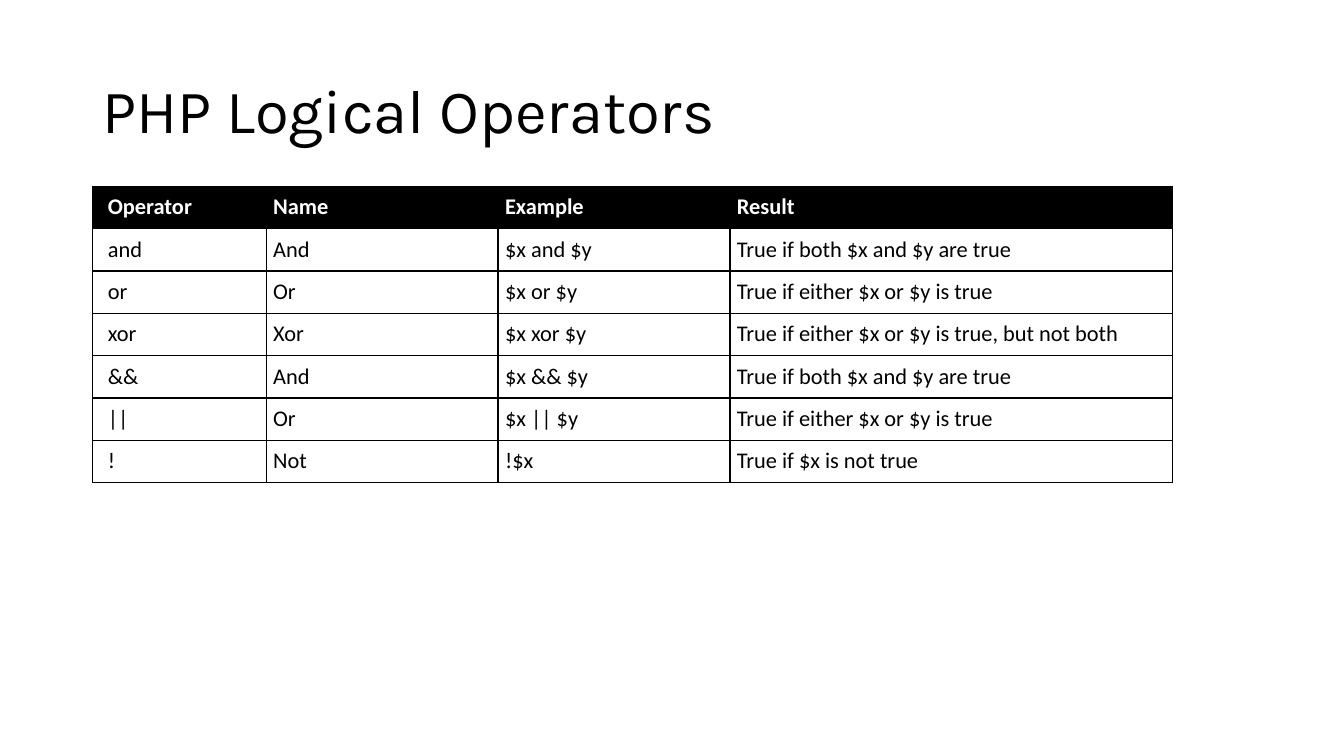
from lxml import etree
from pptx import Presentation
from pptx.dml.color import RGBColor
from pptx.enum.text import MSO_ANCHOR
from pptx.oxml.ns import qn
from pptx.util import Inches, Pt

COLORS = {"ink": "000000", "paper": "FFFFFF"}
COLUMN_WIDTHS = [1.72, 2.3, 2.3, 4.39]
ROW_HEIGHT = 0.42
OPERATORS = [
    ["Operator", "Name", "Example", "Result"],
    ["and", "And", "$x and $y", "True if both $x and $y are true"],
    ["or", "Or", "$x or $y", "True if either $x or $y is true"],
    ["xor", "Xor", "$x xor $y", "True if either $x or $y is true, but not both"],
    ["&&", "And", "$x && $y", "True if both $x and $y are true"],
    ["||", "Or", "$x || $y", "True if either $x or $y is true"],
    ["!", "Not", "!$x", "True if $x is not true"],
]


def add_span(para, text, font, size, color, bold=False):
    span = para.add_run()
    span.text = text
    span.font.name = font
    span.font.size = Pt(size)
    span.font.bold = bold
    span.font.color.rgb = RGBColor.from_string(COLORS[color])


def add_borders(cell):
    properties = cell._tc.get_or_add_tcPr()
    # Border lines must come before the cell fill
    for position, side in enumerate(["lnL", "lnR", "lnT", "lnB"]):
        line = etree.Element(qn(f"a:{side}"), w=str(Pt(1)))
        fill = etree.SubElement(line, qn("a:solidFill"))
        etree.SubElement(fill, qn("a:srgbClr"), val=COLORS["ink"])
        properties.insert(position, line)


deck = Presentation()
deck.slide_width = Inches(13.33)
deck.slide_height = Inches(7.5)
page = deck.slides.add_slide(deck.slide_layouts[6])

# Title
title_box = page.shapes.add_textbox(Inches(0.92), Inches(0.4), Inches(11.5), Inches(1.45))
title_box.text_frame.word_wrap = True
title_box.text_frame.vertical_anchor = MSO_ANCHOR.MIDDLE
title_para = title_box.text_frame.paragraphs[0]
title_para.line_spacing = 0.9
add_span(title_para, "PHP Logical Operators", "Karla", 44, "ink")

# Operator table
table = page.shapes.add_table(
    len(OPERATORS), len(COLUMN_WIDTHS), Inches(0.92), Inches(1.85),
    Inches(sum(COLUMN_WIDTHS)), Inches(ROW_HEIGHT * len(OPERATORS)),
).table
table.horz_banding = False
for column, width in zip(table.columns, COLUMN_WIDTHS):
    column.width = Inches(width)

for row_index, texts in enumerate(OPERATORS):
    table.rows[row_index].height = Inches(ROW_HEIGHT)
    is_header = row_index == 0
    for column_index, text in enumerate(texts):
        cell = table.cell(row_index, column_index)
        cell.margin_left = Inches(0.15 if column_index == 0 else 0.07)
        cell.margin_right = cell.margin_top = cell.margin_bottom = Inches(0.07)
        cell.fill.solid()
        cell.fill.fore_color.rgb = RGBColor.from_string(COLORS["ink" if is_header else "paper"])
        add_borders(cell)
        add_span(cell.text_frame.paragraphs[0], text, "Calibri", 16,
                 "paper" if is_header else "ink", is_header)

deck.save("out.pptx")
